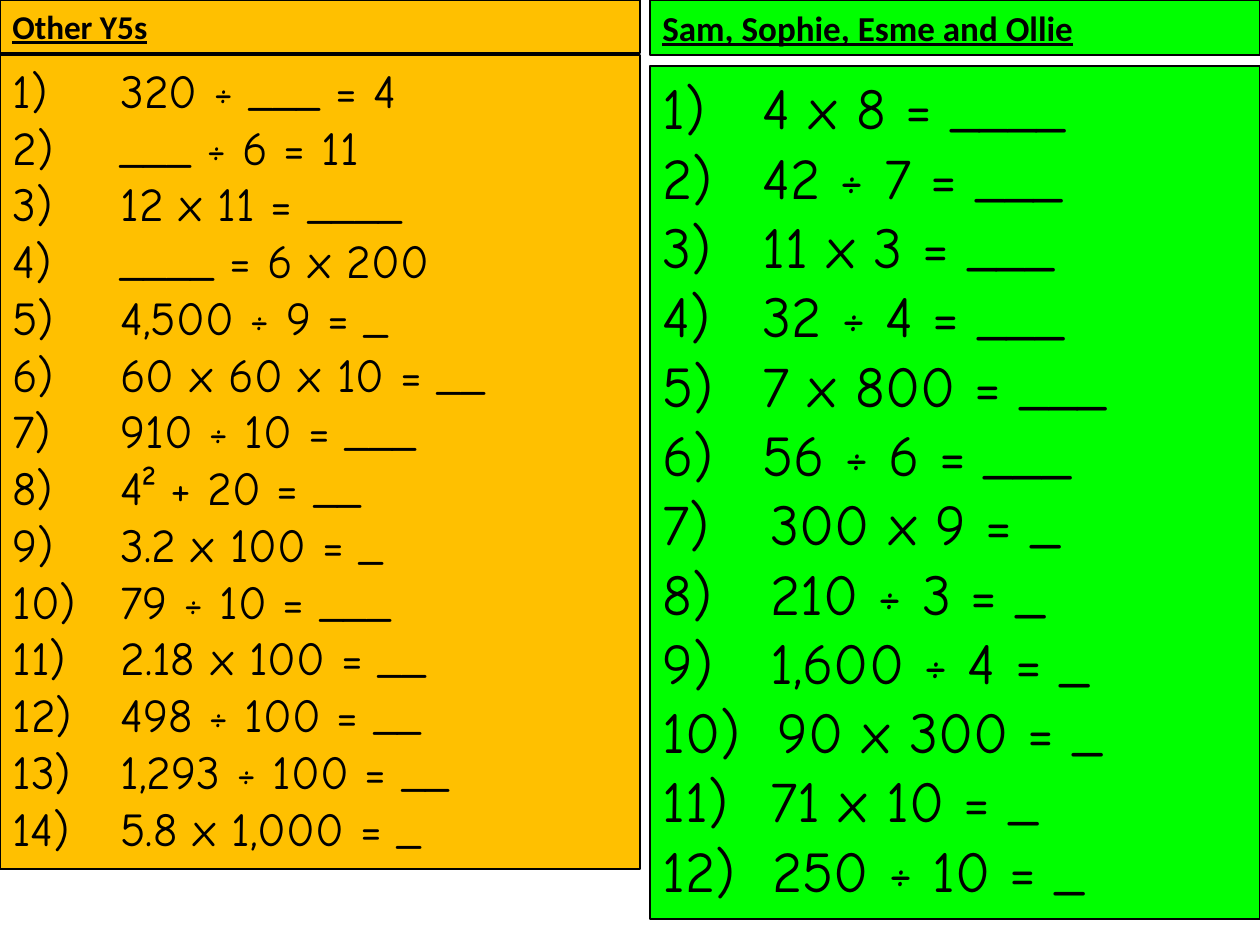
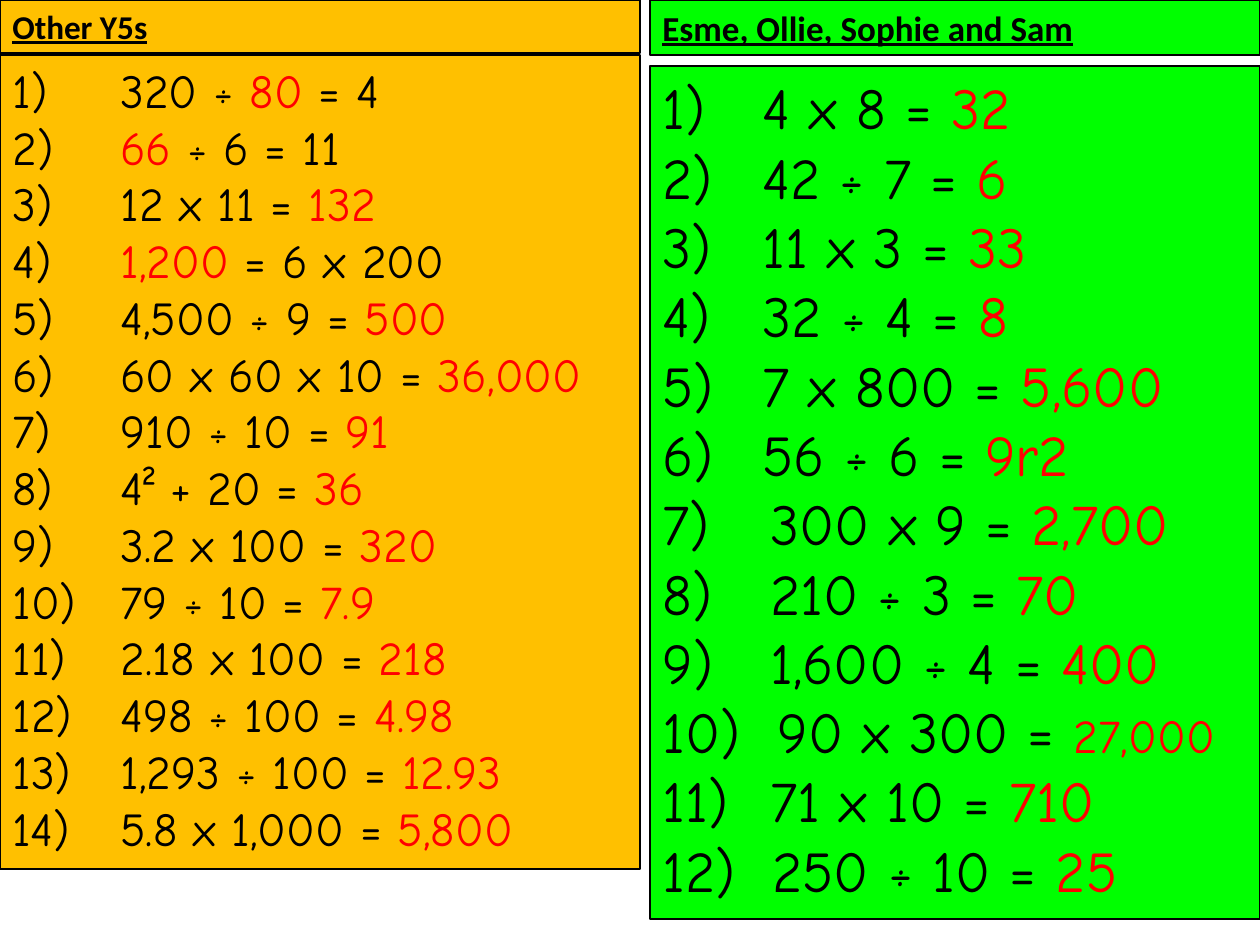
from dataclasses import dataclass

from lxml import etree
from pptx import Presentation
from pptx.dml.color import RGBColor
from pptx.enum.text import MSO_ANCHOR, MSO_AUTO_SIZE, PP_ALIGN
from pptx.oxml.ns import qn
from pptx.util import Emu, Pt

TOP = MSO_ANCHOR.TOP
GROW = MSO_AUTO_SIZE.SHAPE_TO_FIT_TEXT
LEFT = PP_ALIGN.LEFT

EMU_PER_INCH = 914400
PX_PER_INCH = 126
COLOURS = {"ink": "000000", "answer": "FF0000", "orange": "FFC000", "green": "00FF00"}
TITLE_FONT = "Calibri"
SUM_FONT = "Comic Neue"


@dataclass(frozen=True)
class Sum:
    template: str
    blank: int
    answer: str
    indent: int = 108
    start: int = 1
    answer_size: int = 0


@dataclass(frozen=True)
class Frame:
    left: int
    top: int
    width: int
    height: int


@dataclass(frozen=True)
class Group:
    question_title: str
    answer_title: str
    colour: str
    title_frame: Frame
    title_size: int
    sums_frame: Frame
    sum_size: int
    sums: tuple[Sum, ...]


GROUPS = (
    Group(
        "Other Y5s", "Other Y5s", "orange",
        Frame(0, 0, 640, 53), 19, Frame(0, 55, 640, 814), 27,
        (
            Sum("320 ÷ {} = 4", 3, "80"),
            Sum("{} ÷ 6 = 11", 3, "66"),
            Sum("12 x 11 = {}", 4, "132"),
            Sum("{} = 6 x 200", 4, "1,200"),
            Sum("4,500 ÷ 9 = {}", 1, "500"),
            Sum("60 x 60 x 10 = {}", 2, "36,000"),
            Sum("910 ÷ 10 = {}", 3, "91"),
            Sum("4² + 20 = {}", 2, "36"),
            Sum("3.2 x 100 = {}", 1, "320"),
            Sum("79 ÷ 10 = {}", 3, "7.9"),
            Sum("2.18 x 100 = {}", 2, "218"),
            Sum("498 ÷ 100 = {}", 2, "4.98"),
            Sum("1,293 ÷ 100 = {}", 2, "12.93"),
            Sum("5.8 x 1,000 = {}", 1, "5,800"),
        ),
    ),
    Group(
        "Sam, Sophie, Esme and Ollie", "Esme, Ollie, Sophie and Sam", "green",
        Frame(650, 0, 610, 55), 20, Frame(650, 66, 610, 853), 33,
        (
            Sum("4 x 8 = {}", 4, "32", indent=100),
            Sum("42 ÷ 7 = {}", 3, "6", indent=100),
            Sum("11 x 3 = {}", 3, "33", indent=100),
            Sum("32 ÷ 4 = {}", 3, "8", indent=100),
            Sum("7 x 800 = {}", 3, "5,600", indent=100),
            Sum("56 ÷ 6 = {}", 3, "9r2", indent=100),
            Sum("300 x 9 = {}", 1, "2,700", start=7),
            Sum("210 ÷ 3 = {}", 1, "70", start=7),
            Sum("1,600 ÷ 4 = {}", 1, "400", start=7),
            Sum("90 x 300 = {}", 1, "27,000", indent=115, start=7, answer_size=27),
            Sum("71 x 10 = {}", 1, "710", start=7),
            Sum("250 ÷ 10 = {}", 1, "25", indent=110, start=7),
        ),
    ),
)


def px(length: int) -> Emu:
    return Emu(round(length * EMU_PER_INCH / PX_PER_INCH))


def rgb(name: str) -> RGBColor:
    return RGBColor.from_string(COLOURS[name])


def add_text(para, text: str, *, size: int, font: str, colour: str = "ink",
             heading: bool = False) -> None:
    span = para.add_run()
    span.text = text
    span.font.name = font
    span.font.size = Pt(size)
    span.font.color.rgb = rgb(colour)
    span.font.bold = heading
    span.font.underline = heading


def number_paragraph(para, item: Sum) -> None:
    properties = para._p.get_or_add_pPr()
    properties.set("marL", str(px(item.indent)))
    properties.set("indent", str(-px(item.indent)))
    bullet_colour = etree.SubElement(properties, qn("a:buClr"))
    etree.SubElement(bullet_colour, qn("a:srgbClr"), val=COLOURS["ink"])
    etree.SubElement(properties, qn("a:buFont"), typeface=SUM_FONT)
    numbering = etree.SubElement(properties, qn("a:buAutoNum"), type="arabicParenR")
    if item.start > 1:
        numbering.set("startAt", str(item.start))


def add_panel(page, frame: Frame, colour: str):
    box = page.shapes.add_textbox(
        px(frame.left), px(frame.top), px(frame.width), px(frame.height))
    box.fill.solid()
    box.fill.fore_color.rgb = rgb(colour)
    box.line.color.rgb = rgb("ink")
    box.line.width = Pt(1)
    text_frame = box.text_frame
    text_frame.word_wrap = True
    text_frame.auto_size = GROW
    text_frame.vertical_anchor = TOP
    text_frame.paragraphs[0].alignment = LEFT
    return text_frame


def add_sum(para, item: Sum, size: int, solved: bool) -> None:
    number_paragraph(para, item)
    if not solved:
        add_text(para, item.template.format("_" * item.blank), size=size, font=SUM_FONT)
        return
    before, after = item.template.split("{}")
    if before:
        add_text(para, before, size=size, font=SUM_FONT)
    add_text(para, item.answer, size=item.answer_size or size, font=SUM_FONT,
             colour="answer")
    if after:
        add_text(para, after, size=size, font=SUM_FONT)


def add_group(page, group: Group, solved: bool) -> None:
    title = add_panel(page, group.title_frame, group.colour)
    add_text(title.paragraphs[0], group.answer_title if solved else group.question_title,
             size=group.title_size, font=TITLE_FONT, heading=True)
    sums = add_panel(page, group.sums_frame, group.colour)
    for index, item in enumerate(group.sums):
        para = sums.add_paragraph() if index else sums.paragraphs[0]
        add_sum(para, item, group.sum_size, solved)


def main() -> None:
    deck = Presentation()
    deck.slide_width = px(1260)
    deck.slide_height = px(945)
    blank_layout = deck.slide_layouts[6]
    for solved in (False, True):
        page = deck.slides.add_slide(blank_layout)
        for group in GROUPS:
            add_group(page, group, solved)
    deck.save("out.pptx")


if __name__ == "__main__":
    main()
